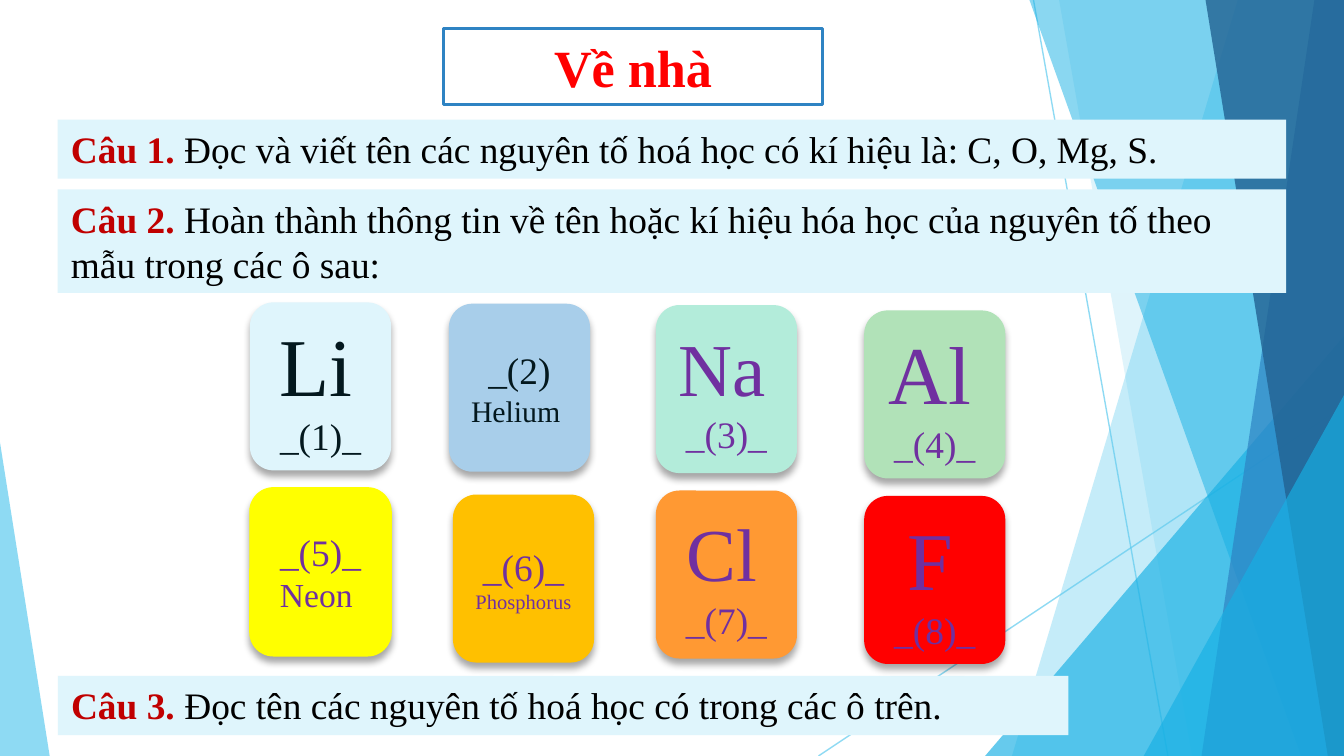
from lxml import etree
from pptx import Presentation
from pptx.dml.color import RGBColor
from pptx.enum.shapes import MSO_CONNECTOR, MSO_SHAPE
from pptx.enum.text import MSO_ANCHOR, PP_ALIGN
from pptx.oxml.ns import qn
from pptx.util import Inches, Pt

RECT = MSO_SHAPE.RECTANGLE
ROUNDED = MSO_SHAPE.ROUNDED_RECTANGLE
TRIANGLE = MSO_SHAPE.ISOSCELES_TRIANGLE
STRAIGHT = MSO_CONNECTOR.STRAIGHT
CENTER, LEFT = PP_ALIGN.CENTER, PP_ALIGN.LEFT
MIDDLE, TOP = MSO_ANCHOR.MIDDLE, MSO_ANCHOR.TOP
FONT = "Times New Roman"
PURPLE, INK, PALE = "7030A0", "03181E", "DFF5FC"
WIDTH = 10
HEIGHT = WIDTH * 9 / 16


def paint(shape, color, opacity=100):
    """Give a shape a flat fill, with no outline and no shadow."""
    shape.shadow.inherit = False
    shape.fill.solid()
    shape.fill.fore_color.rgb = RGBColor.from_string(color)
    shape.line.fill.background()
    if opacity < 100:
        tint = shape.element.spPr.find(qn("a:solidFill"))[0]
        etree.SubElement(tint, qn("a:alpha"), val=str(opacity * 1000))


def write(shape, lines, align, anchor):
    """Fill a shape with lines, each a list of (text, size, color, bold) runs."""
    frame = shape.text_frame
    frame.word_wrap = True
    frame.vertical_anchor = anchor
    for index, runs in enumerate(lines):
        paragraph = frame.add_paragraph() if index else frame.paragraphs[0]
        paragraph.alignment = align
        for text, size, color, bold in runs:
            run = paragraph.add_run()
            run.text = text
            run.font.name = FONT
            run.font.size = Pt(size)
            run.font.bold = bold
            run.font.color.rgb = RGBColor.from_string(color)


prs = Presentation()
prs.slide_width, prs.slide_height = Inches(WIDTH), Inches(HEIGHT)
slide = prs.slides.add_slide(prs.slide_layouts[6])
shapes = slide.shapes

# Thin rays behind the facets
for x1, y1, x2, y2 in [(7.69, 0, 8.69, HEIGHT), (WIDTH, 3.02, 6.09, HEIGHT)]:
    ray = shapes.add_connector(STRAIGHT, Inches(x1), Inches(y1), Inches(x2), Inches(y2))
    ray.line.width = Pt(0.75)
    ray.line.color.rgb = RGBColor.from_string("5FCBEF")
    tint = ray.element.spPr.find(qn("a:ln")).find(qn("a:solidFill"))[0]
    etree.SubElement(tint, qn("a:alpha"), val="70000")
    etree.SubElement(ray.element.spPr, qn("a:effectLst"))

# Bands run to the right edge: (top x, bottom x).
# Triangles stand on the bottom edge: (left, top, width, apex position).
facets = [
    ((9.21, 7.53), "5FCBEF", 36),
    ((7.88, 8.87), "5FCBEF", 20),
    ((7.33, 2.5, 2.67, 1), "17B0E4", 66),
    ((7.66, 9.68), "17B0E4", 50),
    ((9.78, 8.94), "2E83C3", 70),
    ((8.97, 9.88), "226292", 80),
    ((8.51, 2.94, 1.49, 1), "17B0E4", 66),
    ((0, 3.29, 0.37, 0), "5FCBEF", 70),
]
for geometry, color, opacity in facets:
    if len(geometry) == 2:
        top_x, bottom_x = geometry
        outline = shapes.build_freeform(Inches(top_x), 0)
        corners = [(WIDTH, 0), (WIDTH, HEIGHT), (bottom_x, HEIGHT)]
        outline.add_line_segments([(Inches(x), Inches(y)) for x, y in corners])
        facet = outline.convert_to_shape()
    else:
        left, top, width, apex = geometry
        facet = shapes.add_shape(TRIANGLE, Inches(left), Inches(top),
                                 Inches(width), Inches(HEIGHT - top))
        facet.adjustments[0] = apex
    paint(facet, color, opacity)

title = shapes.add_shape(RECT, Inches(3.3), Inches(0.21), Inches(2.82), Inches(0.57))
paint(title, "FFFFFF")
title.line.color.rgb = RGBColor.from_string("2E83C3")
title.line.width = Pt(1.5)
write(title, [[("Về nhà", 28, "FF0000", True)]], CENTER, TOP)

questions = [
    (0.89, 9.14, 0.44, "Câu 1. ",
     "Đọc và viết tên các nguyên tố hoá học có kí hiệu là: C, O, Mg, S."),
    (1.41, 9.14, 0.77, "Câu 2. ",
     "Hoàn thành thông tin về tên hoặc kí hiệu hóa học của nguyên tố "
     "theo mẫu trong các ô sau:"),
    (5.03, 7.52, 0.44, "Câu 3. ",
     "Đọc tên các nguyên tố hoá học có trong các ô trên."),
]
for top, width, height, label, wording in questions:
    question = shapes.add_shape(RECT, Inches(0.43), Inches(top),
                                Inches(width), Inches(height))
    paint(question, PALE)
    write(question, [[(label, 20, "C00000", True), (wording, 20, "000000", False)]],
          LEFT, TOP)

# Element cards: left, top, fill, text color, then (text, size) of both lines
cards = [
    (1.86, 2.25, PALE, INK, ("Li", 44), ("_(1)_", 20)),
    (1.86, 3.63, "FFFF00", PURPLE, ("_(5)_", 20), ("Neon ", 18)),
    (3.37, 3.68, "FFC000", PURPLE, ("_(6)_", 20), ("Phosphorus", 11)),
    (4.88, 2.27, "B3ECDA", PURPLE, ("Na", 40), ("_(3)_", 20)),
    (6.43, 2.31, "B1E2B8", PURPLE, ("Al", 44), ("_(4)_", 20)),
    (4.88, 3.65, "FF9933", PURPLE, ("Cl", 40), ("_(7)_", 20)),
    (6.43, 3.69, "FF0000", PURPLE, ("F", 44), ("_(8)_", 20)),
    (3.34, 2.26, "A8CEEA", INK, ("_(2)", 20), ("Helium ", 16)),
]
for left, top, fill, color, upper, lower in cards:
    card = shapes.add_shape(ROUNDED, Inches(left), Inches(top), Inches(1.05), Inches(1.25))
    paint(card, fill)
    if fill == "FFFF00":
        card.line.color.rgb = RGBColor.from_string(fill)
        card.line.width = Pt(0.75)
    effects = card.element.spPr.find(qn("a:effectLst"))
    shadow = etree.SubElement(effects, qn("a:outerShdw"), blurRad=str(Pt(4)),
                              dist=str(Pt(3)), dir="5400000", rotWithShape="0")
    shade = etree.SubElement(shadow, qn("a:srgbClr"), val="000000")
    etree.SubElement(shade, qn("a:alpha"), val="35000")
    lines = [[(*upper, color, False)], [(*lower, color, False)]]
    if upper[1] > 20:
        lines[0].append((" ", 20, color, False))
    write(card, lines, CENTER, MIDDLE)

prs.save("out.pptx")
